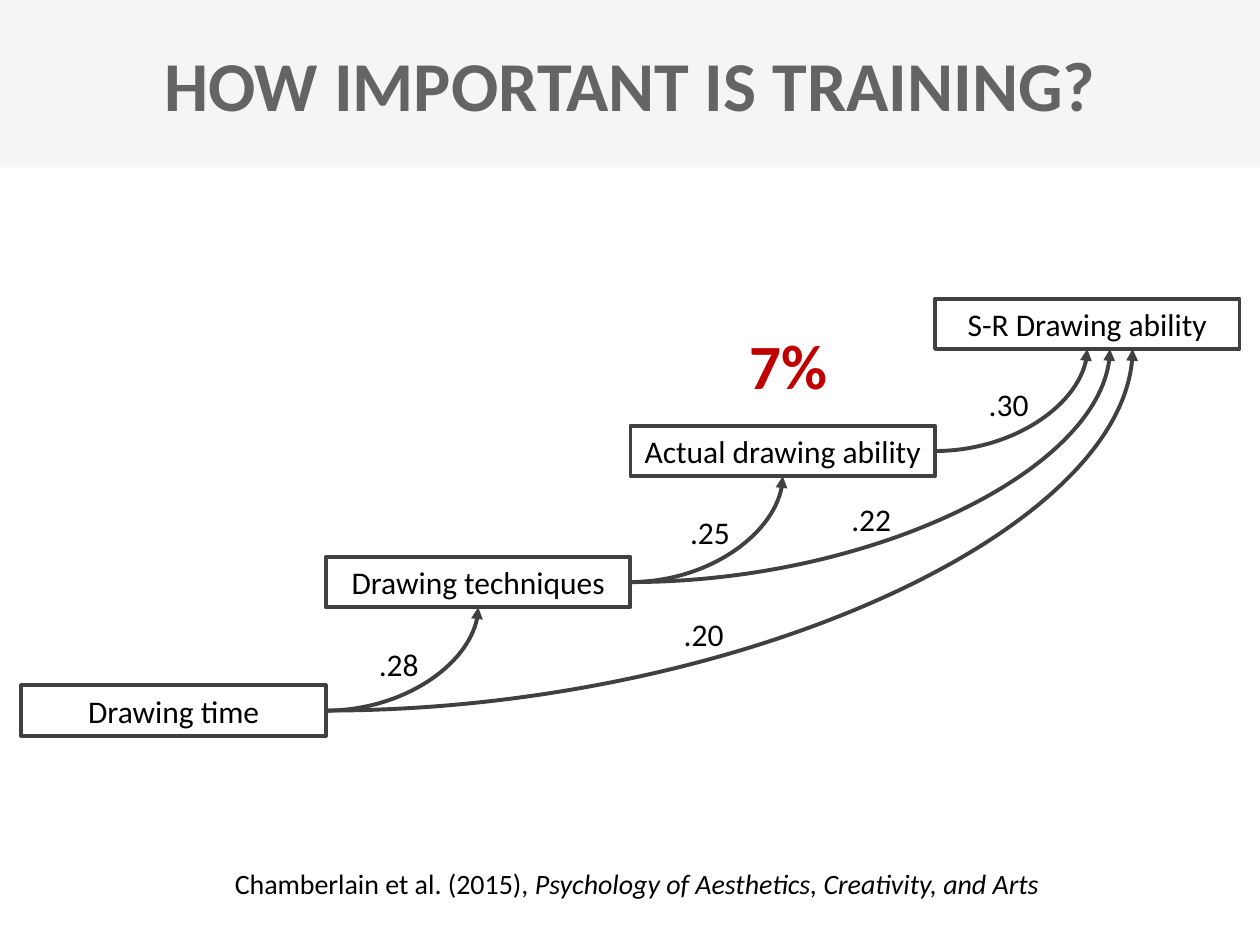
from lxml import etree
from pptx import Presentation
from pptx.dml.color import RGBColor
from pptx.enum.shapes import MSO_CONNECTOR, MSO_SHAPE
from pptx.enum.text import MSO_ANCHOR, MSO_AUTO_SIZE, PP_ALIGN
from pptx.oxml.ns import qn
from pptx.util import Inches, Pt

RECT = MSO_SHAPE.RECTANGLE
CURVE = MSO_CONNECTOR.CURVE
CENTER = PP_ALIGN.CENTER
TOP, MIDDLE = MSO_ANCHOR.TOP, MSO_ANCHOR.MIDDLE
GROW = MSO_AUTO_SIZE.SHAPE_TO_FIT_TEXT

BLACK = RGBColor(0x00, 0x00, 0x00)
BAND = RGBColor(0xF5, 0xF5, 0xF5)
TITLE = RGBColor(0x64, 0x64, 0x64)
LINE = RGBColor(0x40, 0x40, 0x40)
RED = RGBColor(0xC0, 0x00, 0x00)

WIDTH, HEIGHT = 10, 7.5
LEFT, BOX_W, BOX_H = 0.17, 2.417, 0.4  # staircase of touching columns
STEPS = [
    ("Drawing time", 5.44),
    ("Drawing techniques", 4.42),
    ("Actual drawing ability", 3.38),
    ("S-R Drawing ability", 2.37),
]
# from step, to step, shift of the arrow tip, coefficient, label left and top
PATHS = [
    (0, 1, 0, ".28", 2.83, 5.07),
    (1, 2, 0, ".25", 5.3, 4.02),
    (2, 3, 0, ".30", 7.67, 3.01),
    (1, 3, 0.18, ".22", 6.58, 3.92),
    (0, 3, 0.36, ".20", 5.25, 4.83),
]


def write(sp, parts, size, color=BLACK, bold=False, anchor=TOP):
    """Fill a shape with one centred paragraph of (text, italic) parts."""
    tf = sp.text_frame
    tf.word_wrap = True
    tf.vertical_anchor = anchor
    p = tf.paragraphs[0]
    p.alignment = CENTER
    for text, italic in parts:
        r = p.add_run()
        r.text = text
        r.font.name = "Calibri"
        r.font.size = Pt(size)
        r.font.bold = bold
        r.font.italic = italic
        r.font.color.rgb = color
    return tf


def add_text(slide, box, parts, size, **style):
    sp = slide.shapes.add_textbox(*map(Inches, box))
    return write(sp, parts, size, **style)


def add_rect(slide, box):
    sp = slide.shapes.add_shape(RECT, *map(Inches, box))
    sp.shadow.inherit = False
    return sp


def add_step(slide, column, text, top):
    sp = add_rect(slide, (LEFT + column * BOX_W, top, BOX_W, BOX_H))
    sp.fill.background()
    sp.line.color.rgb = LINE
    sp.line.width = Pt(2.25)
    write(sp, [(text, False)], 18).auto_size = GROW


def add_curve(slide, start, end, shift):
    """Curve from the right side of one step to the bottom of another."""
    x1, y1 = LEFT + (start + 1) * BOX_W, STEPS[start][1] + BOX_H / 2
    x2, y2 = LEFT + (end + 0.5) * BOX_W + shift, STEPS[end][1] + BOX_H
    cxn = slide.shapes.add_connector(CURVE, *map(Inches, (x1, y1, x2, y2)))
    cxn.line.color.rgb = LINE
    cxn.line.width = Pt(2.25)
    sp_pr = cxn._element.spPr
    sp_pr.find(qn("a:prstGeom")).set("prst", "curvedConnector2")
    etree.SubElement(cxn.line._get_or_add_ln(), qn("a:tailEnd"), type="triangle")
    etree.SubElement(sp_pr, qn("a:effectLst"))


def main():
    prs = Presentation()
    prs.slide_width, prs.slide_height = Inches(WIDTH), Inches(HEIGHT)
    slide = prs.slides.add_slide(prs.slide_layouts[6])

    # Title band
    band = add_rect(slide, (0, 0, WIDTH, 1.33))
    band.fill.solid()
    band.fill.fore_color.rgb = BAND
    band.line.fill.background()
    add_text(slide, (0, 0.44, WIDTH, 0.45), [("HOW IMPORTANT IS TRAINING?", False)],
             40, color=TITLE, bold=True, anchor=MIDDLE)

    # Source
    source = [("Chamberlain et al. (2015), ", False),
              ("Psychology of Aesthetics, Creativity, and Arts", True)]
    add_text(slide, (0.11, 6.83, 9.89, 0.37), source, 16)

    # Path model
    for column, (text, top) in enumerate(STEPS):
        add_step(slide, column, text, top)
    for start, end, shift, value, x, y in PATHS:
        add_curve(slide, start, end, shift)
        add_text(slide, (x, y, 0.67, BOX_H), [(value, False)], 18)

    # Explained variance
    add_text(slide, (5.67, 2.54, 1.17, 0.71), [("7%", False)], 36, color=RED, bold=True)

    prs.save("out.pptx")


if __name__ == "__main__":
    main()
